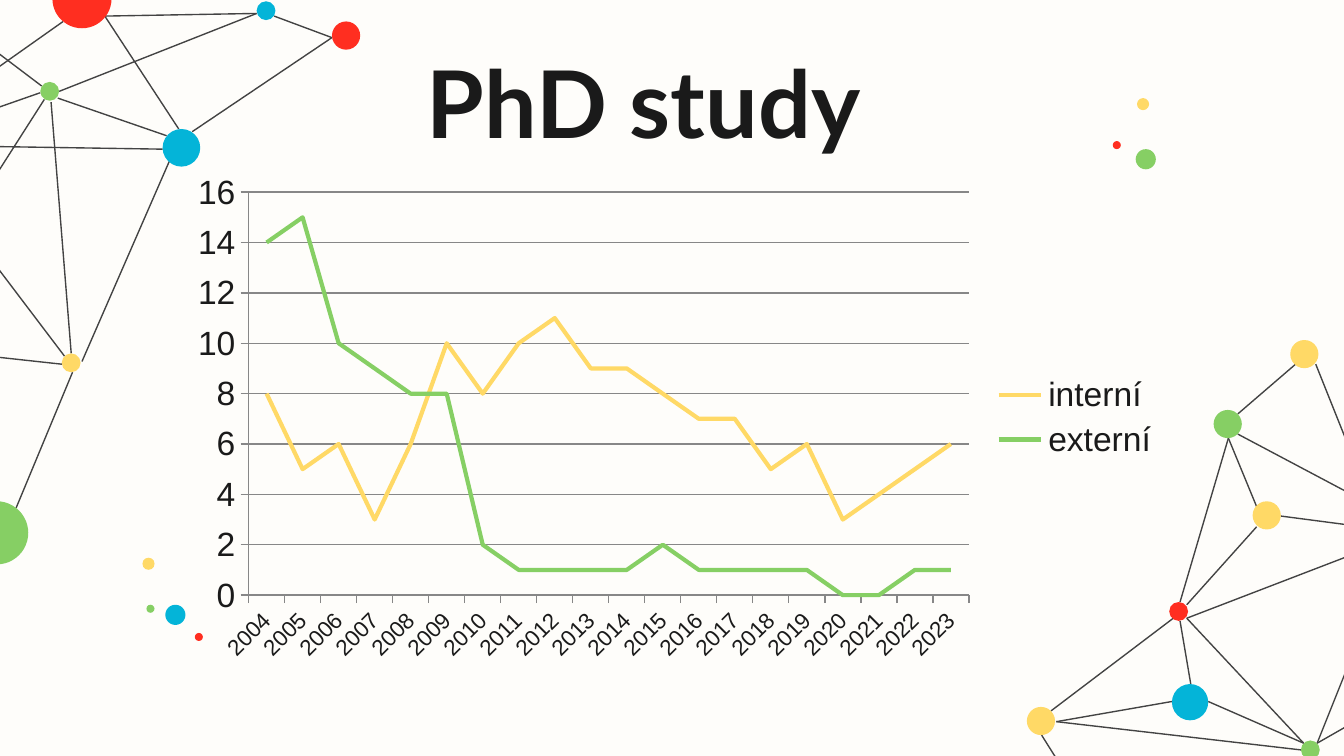
"""Build the PhD study slide: a line chart between two dotted networks."""
import dataclasses
import typing

import lxml.etree
import pptx
import pptx.chart.data
import pptx.dml.color
import pptx.enum.chart
import pptx.enum.shapes
import pptx.enum.text
import pptx.oxml
import pptx.oxml.ns
import pptx.util

Inches = pptx.util.Inches
Pt = pptx.util.Pt
RED, GREEN, BLUE, GOLD = "FF2E20", "86CF64", "04B4D8", "FFD966"
INK, GREY, EDGE, PAPER = "1A1A1A", "878787", "434343", "FEFDFA"


class Dot(typing.NamedTuple):
    x: float
    y: float
    size: float
    color: str


class Link(typing.NamedTuple):
    x1: float
    y1: float
    x2: float
    y2: float


class Box(typing.NamedTuple):
    x: float
    y: float
    w: float
    h: float


@dataclasses.dataclass(frozen=True)
class Web:
    dots: list[Dot]
    links: list[Link] = dataclasses.field(default_factory=list)


WEBS = [
    Web(
        [
            Dot(2.47, 0.16, 0.21, RED),
            Dot(0.39, -0.23, 0.44, RED),
            Dot(0.3, 0.61, 0.14, GREEN),
            Dot(1.21, 0.96, 0.28, BLUE),
            Dot(0.46, 2.63, 0.14, GOLD),
            Dot(1.91, 0.01, 0.14, BLUE),
            Dot(-0.26, 3.73, 0.47, GREEN),
        ],
        [
            Link(1.24, 1.01, 0.43, 0.73),
            Link(0.53, 2.63, 0.38, 0.76),
            Link(2.47, 0.28, 1.43, 0.98),
            Link(1.26, 1.2, 0.61, 2.69),
            Link(0.46, 2.71, -0.73, 2.58),
            Link(0.33, 0.74, -0.75, 2.43),
            Link(2.47, 0.28, 2.04, 0.12),
            Link(1.91, 0.1, 0.44, 0.68),
            Link(1.91, 0.1, 0.78, 0.12),
            Link(0.47, 0.16, -0.72, 1),
            Link(0.3, 0.69, -0.7, 1.04),
            Link(0.48, 2.65, -0.71, 1.08),
            Link(1.21, 1.11, -0.71, 1.08),
            Link(1.33, 0.96, 0.78, 0.12),
            Link(-1.17, -0.48, 0.31, 0.64),
            Link(0.54, 2.77, 0.12, 3.78),
        ],
    ),
    Web(
        [
            Dot(7.64, 5.26, 0.21, GOLD),
            Dot(9.68, 5.51, 0.14, GREEN),
            Dot(8.7, 4.48, 0.14, RED),
            Dot(9.03, 3.05, 0.21, GREEN),
            Dot(8.72, 5.09, 0.27, BLUE),
            Dot(9.6, 2.53, 0.21, GOLD),
            Dot(9.32, 3.73, 0.21, GOLD),
        ],
        [
            Link(7.86, 5.37, 9.68, 5.58),
            Link(7.75, 5.47, 8.43, 6.55),
            Link(7.82, 5.29, 8.73, 4.6),
            Link(8.83, 4.6, 9.7, 5.53),
            Link(8.83, 4.6, 10.21, 4.07),
            Link(10.36, 4.13, 9.8, 5.53),
            Link(12.06, 4.24, 9.8, 5.53),
            Link(10.21, 3.76, 9.21, 3.23),
            Link(9.14, 3.26, 8.78, 4.48),
            Link(7.86, 5.37, 8.72, 5.22),
            Link(8.78, 4.62, 8.86, 5.09),
            Link(8.99, 5.22, 9.7, 5.53),
            Link(9.21, 3.08, 9.64, 2.71),
            Link(9.79, 2.71, 10.21, 3.76),
            Link(9.14, 3.26, 9.35, 3.77),
            Link(9.35, 3.92, 8.83, 4.5),
            Link(9.53, 3.84, 10.14, 3.92),
        ],
    ),
    Web([Dot(8.46, 0.73, 0.09, GOLD), Dot(8.45, 1.11, 0.15, GREEN),
         Dot(8.28, 1.05, 0.06, RED)]),
    Web([Dot(1.06, 4.15, 0.09, GOLD), Dot(1.23, 4.5, 0.15, BLUE),
         Dot(1.45, 4.71, 0.06, RED), Dot(1.09, 4.5, 0.06, GREEN)]),
]

SERIES = {
    "interní": (GOLD, [8, 5, 6, 3, 6, 10, 8, 10, 11, 9, 9, 8, 7, 7, 5, 6, 3, 4, 5, 6]),
    "externí": (GREEN, [14, 15, 10, 9, 8, 8, 2, 1, 1, 1, 1, 2, 1, 1, 1, 1, 0, 0, 1, 1]),
}
GRAPH = Box(1.32, 1.22, 7.41, 3.77)
PLOT = Box(1.85, 1.43, 5.36, 3)


def apply(item: typing.Any, form: dict[str, typing.Any]) -> None:
    """Set every format value on the item."""
    for key, value in form.items():
        setattr(item, key, value)


def paint(fill: typing.Any, color: str) -> None:
    """Fill with a solid colour."""
    fill.solid()
    fill.fore_color.rgb = pptx.dml.color.RGBColor.from_string(color)


def stroke(line: typing.Any, color: str, width: float) -> None:
    """Give a line its colour and width."""
    paint(line.fill, color)
    line.width = Pt(width)


def style(font: typing.Any, name: str, size: float, bold: bool = False) -> None:
    """Give text its font, size and ink."""
    apply(font, {"name": name, "size": Pt(size), "bold": bold})
    paint(font.fill, INK)


def add_web(slide: typing.Any, web: Web) -> None:
    """Draw the links and dots of a web as one group."""
    shapes = slide.shapes.add_group_shape().shapes
    for link in web.links:
        line = shapes.add_connector(
            pptx.enum.shapes.MSO_CONNECTOR.STRAIGHT, *map(Inches, link))
        stroke(line.line, EDGE, 0.75)
        lxml.etree.SubElement(line._element.spPr, pptx.oxml.ns.qn("a:effectLst"))
    for x, y, size, color in web.dots:
        disc = shapes.add_shape(
            pptx.enum.shapes.MSO_SHAPE.OVAL, *map(Inches, (x, y, size, size)))
        disc.shadow.inherit = False
        paint(disc.fill, color)
        disc.line.fill.background()


def add_title(slide: typing.Any) -> None:
    """Place and format the title."""
    title = slide.shapes.title
    apply(title, {"left": Inches(1.39), "top": Inches(0.36),
                  "width": Inches(6.8), "height": Inches(0.91)})
    frame = title.text_frame
    frame.text = "PhD study"
    sides = ("left", "right", "top", "bottom")
    apply(frame, {f"margin_{side}": Inches(0.1) for side in sides})
    apply(frame, {"word_wrap": True, "auto_size": pptx.enum.text.MSO_AUTO_SIZE.NONE,
                  "vertical_anchor": pptx.enum.text.MSO_ANCHOR.BOTTOM})
    frame.paragraphs[0].alignment = pptx.enum.text.PP_ALIGN.CENTER
    style(frame.paragraphs[0].runs[0].font, "Lato", 50, True)


def fit_plot(area: typing.Any) -> None:
    """Fix the inner plot area within the chart."""
    for old in area.findall(pptx.oxml.ns.qn("c:layout")):
        area.remove(old)
    parts = {"layoutTarget": "inner", "xMode": "edge", "yMode": "edge",
             "x": (PLOT.x - GRAPH.x) / GRAPH.w, "y": (PLOT.y - GRAPH.y) / GRAPH.h,
             "w": PLOT.w / GRAPH.w, "h": PLOT.h / GRAPH.h}
    body = "".join(f'<c:{tag} val="{value}"/>' for tag, value in parts.items())
    area.insert(0, pptx.oxml.parse_xml(
        f'<c:layout {pptx.oxml.ns.nsdecls("c")}><c:manualLayout>{body}'
        "</c:manualLayout></c:layout>"))


def add_graph(slide: typing.Any) -> None:
    """Draw the line chart of yearly counts."""
    data = pptx.chart.data.CategoryChartData()
    data.categories = [str(year) for year in range(2004, 2024)]
    for name, (_, counts) in SERIES.items():
        data.add_series(name, counts)
    chart = slide.shapes.add_chart(
        pptx.enum.chart.XL_CHART_TYPE.LINE, *map(Inches, GRAPH), data).chart
    apply(chart, {"has_title": False, "has_legend": True})
    style(chart.font, "Arial", 18)
    apply(chart.legend, {"position": pptx.enum.chart.XL_LEGEND_POSITION.RIGHT,
                         "include_in_layout": False})
    plot = chart.plots[0]
    plot.vary_by_categories = False
    for line, (color, _) in zip(plot.series, SERIES.values()):
        line.smooth = False
        line.marker.style = pptx.enum.chart.XL_MARKER_STYLE.NONE
        stroke(line.format.line, color, 2.25)
    base, side = chart.category_axis, chart.value_axis
    for axis, size in ((base, 12), (side, 18)):
        axis.major_tick_mark = pptx.enum.chart.XL_TICK_MARK.OUTSIDE
        stroke(axis.format.line, GREY, 0.75)
        style(axis.tick_labels.font, "Arial", size)
    base._element.txPr.bodyPr.set("rot", "-2700000")
    apply(side, {"minimum_scale": 0, "maximum_scale": 16, "major_unit": 2,
                 "has_major_gridlines": True})
    stroke(side.major_gridlines.format.line, GREY, 0.75)
    fit_plot(chart._chartSpace.chart.plotArea)


def main() -> None:
    """Build and save the slide."""
    deck = pptx.Presentation()
    wide = Inches(10)
    apply(deck, {"slide_width": wide, "slide_height": wide * 9 // 16})
    slide = deck.slides.add_slide(deck.slide_layouts[5])
    paint(slide.background.fill, PAPER)
    for web in WEBS:
        add_web(slide, web)
    add_title(slide)
    add_graph(slide)
    deck.save("out.pptx")


if __name__ == "__main__":
    main()
